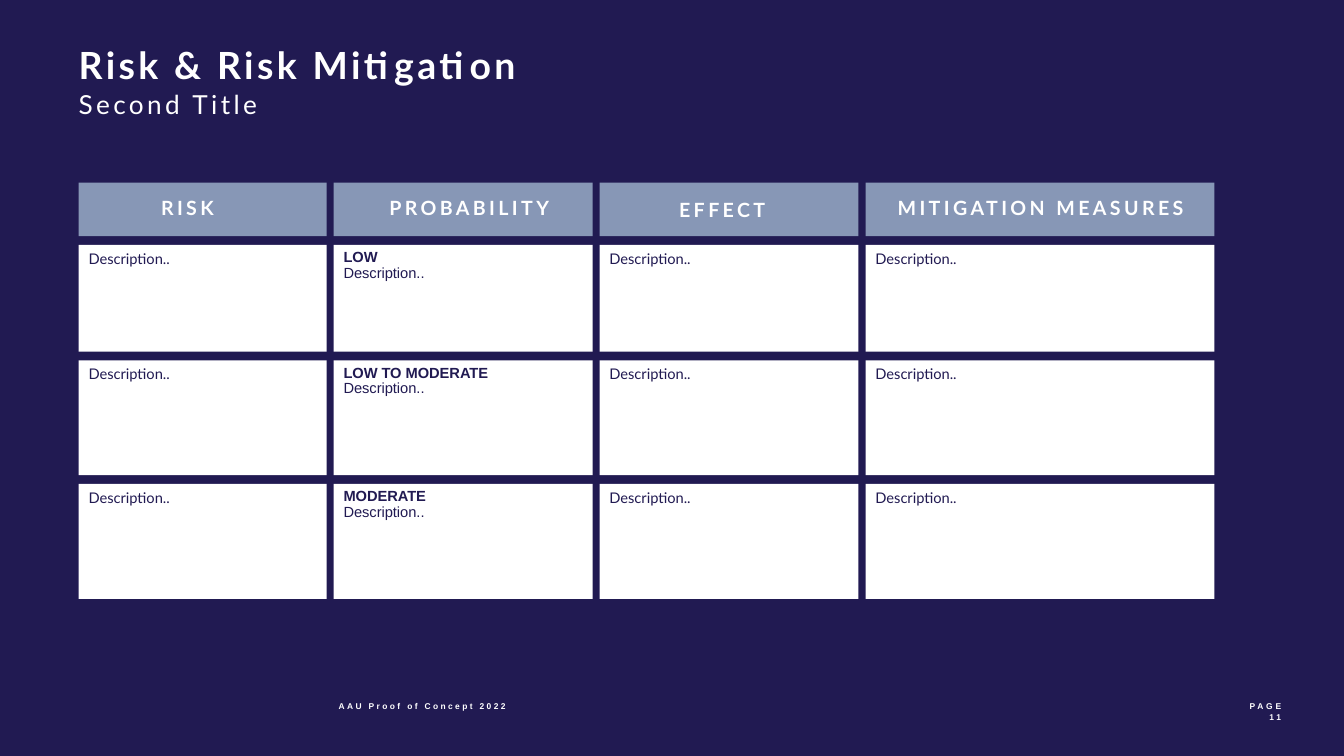
from dataclasses import dataclass
from typing import Any

from pptx import Presentation
from pptx import util as u
from pptx.dml import color
from pptx.enum import shapes, text

Pt = u.Pt


@dataclass(frozen=True)
class Theme:
    navy: color.RGBColor = color.RGBColor(0x21, 0x1A, 0x52)
    slate: color.RGBColor = color.RGBColor(0x87, 0x97, 0xB6)
    white: color.RGBColor = color.RGBColor(0xFF, 0xFF, 0xFF)
    main: str = "Lato"
    plain: str = "Arial"
    title: float = 26.7
    second: float = 18.7
    head: float = 14
    body: float = 10.5
    foot: float = 6


THEME = Theme()


@dataclass(frozen=True)
class Box:
    left: float
    top: float
    width: float
    height: float


@dataclass(frozen=True)
class Style:
    name: str
    size: float
    tint: color.RGBColor
    bold: bool = False
    track: float = 0  # letter spacing in points


@dataclass(frozen=True)
class Line:
    words: str
    style: Style


@dataclass(frozen=True)
class Column:
    head: str
    width: float
    label: Box
    levels: tuple[str, ...] = ()


TITLE = Style(THEME.main, THEME.title, THEME.white, True, 2.4)
SECOND = Style(THEME.main, THEME.second, THEME.white, track=2.4)
HEAD = Style(THEME.main, THEME.head, THEME.white, True, 2.4)
BODY = Style(THEME.main, THEME.body, THEME.navy)
LEVEL = Style(THEME.plain, THEME.body, THEME.navy, True)
NOTE = Style(THEME.plain, THEME.body, THEME.navy)
PAGE = Style(THEME.plain, THEME.foot, THEME.white, True, 2)
FOOT = Style(THEME.plain, THEME.foot, THEME.white, True, 1.7)

LEFT, TOP = 56.2, 130.5
GAP_X, GAP_Y = 5, 6.2
HEAD_H = 38.2
ROWS = (76.3, 82.1, 82.1)
LEAD = 11.3
ENTRY = "Description.."

COLUMNS = (
    Column("RISK", 177.1, Box(82.1, 139.7, 103.7, 17.3)),
    Column("PROBABILITY", 185, Box(249.1, 139.7, 172.1, 17.3),
           ("LOW", "LOW TO MODERATE", "MODERATE")),
    Column("EFFECT", 185, Box(454.3, 141.1, 123.1, 17.3)),
    Column("MITIGATION MEASURES", 249.1, Box(636.5, 140.1, 213.8, 17.3)),
)


def assign(target: Any, values: dict[str, Any]) -> None:
    for key, value in values.items():
        setattr(target, key, value)


def place(box: Box) -> tuple[u.Length, ...]:
    return tuple(Pt(v) for v in (box.left, box.top, box.width, box.height))


def write(frame: Any, lines: list[Line], align: Any, lead: float | None = None) -> None:
    for i, line in enumerate(lines):
        para = frame.add_paragraph() if i else frame.paragraphs[0]
        para.alignment = align
        if lead:
            para.line_spacing = Pt(lead)
        run = para.add_run()
        run.text = line.words
        style = line.style
        assign(run.font, {"name": style.name, "size": Pt(style.size), "bold": style.bold})
        run.font.color.rgb = style.tint
        if style.track:
            run._r.get_or_add_rPr().set("spc", str(round(style.track * 100)))


def add_text(slide: Any, box: Box, lines: list[Line],
             align: Any = text.PP_ALIGN.LEFT, grow: bool = True) -> None:
    frame = slide.shapes.add_textbox(*place(box)).text_frame
    fit = text.MSO_AUTO_SIZE
    assign(frame, {
        "margin_left": 0, "margin_right": 0, "margin_top": 0, "margin_bottom": 0,
        "word_wrap": True,
        "auto_size": fit.SHAPE_TO_FIT_TEXT if grow else fit.NONE,
    })
    write(frame, lines, align)


def add_block(slide: Any, box: Box, fill: color.RGBColor) -> Any:
    block = slide.shapes.add_shape(shapes.MSO_SHAPE.RECTANGLE, *place(box))
    block.shadow.inherit = False
    block.fill.solid()
    block.fill.fore_color.rgb = fill
    block.line.fill.background()
    assign(block.text_frame, {"word_wrap": True, "vertical_anchor": text.MSO_ANCHOR.TOP})
    return block.text_frame


def add_column(slide: Any, col: Column, left: float) -> None:
    add_block(slide, Box(left, TOP, col.width, HEAD_H), THEME.slate)
    add_text(slide, col.label, [Line(col.head, HEAD)], text.PP_ALIGN.CENTER)
    top = TOP + HEAD_H + GAP_Y
    for i, height in enumerate(ROWS):
        frame = add_block(slide, Box(left, top, col.width, height), THEME.white)
        if col.levels:
            lines = [Line(col.levels[i], LEVEL), Line(ENTRY, NOTE)]
            write(frame, lines, text.PP_ALIGN.LEFT, LEAD)
        else:
            write(frame, [Line(ENTRY, BODY)], text.PP_ALIGN.LEFT)
        top += height + GAP_Y


def main() -> None:
    deck = Presentation()
    assign(deck, {"slide_width": Pt(960), "slide_height": Pt(540)})
    slide = deck.slides.add_slide(deck.slide_layouts[6])
    slide.background.fill.solid()
    slide.background.fill.fore_color.rgb = THEME.navy

    add_text(slide, Box(LEFT, 30.2, 391.7, 32.4), [Line("Risk & Risk Mitigation", TITLE)])
    add_text(slide, Box(LEFT, 63.4, 208, 22.3), [Line("Second Title", SECOND)])

    left = LEFT
    for col in COLUMNS:
        add_column(slide, col, left)
        left += col.width + GAP_X

    add_text(slide, Box(241.9, 501.1, 143.3, 22.3),
             [Line("AAU Proof of Concept 2022", FOOT)], grow=False)
    add_text(slide, Box(803.5, 501.1, 111.6, 22.3),
             [Line("PAGE", PAGE), Line("11", PAGE)], text.PP_ALIGN.RIGHT, grow=False)
    deck.save("out.pptx")


if __name__ == "__main__":
    main()
